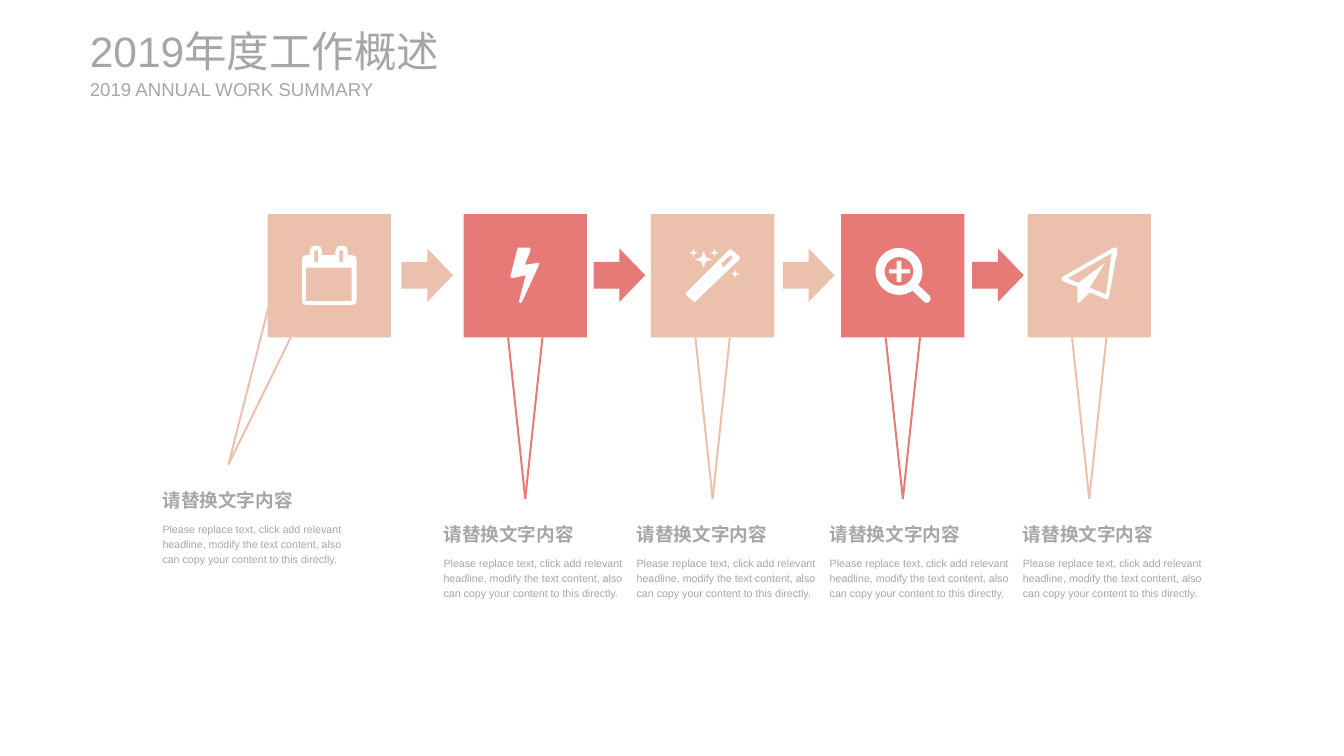
from math import cos, radians, sin

from lxml import etree
from pptx import Presentation
from pptx.dml.color import RGBColor
from pptx.enum.shapes import MSO_CONNECTOR, MSO_SHAPE
from pptx.enum.text import MSO_ANCHOR, MSO_AUTO_SIZE, PP_ALIGN
from pptx.oxml.ns import qn
from pptx.util import Inches, Pt

RECTANGLE = MSO_SHAPE.RECTANGLE
RIGHT_ARROW = MSO_SHAPE.RIGHT_ARROW
STRAIGHT = MSO_CONNECTOR.STRAIGHT
MIDDLE, TOP = MSO_ANCHOR.MIDDLE, MSO_ANCHOR.TOP
LEFT = PP_ALIGN.LEFT
NO_AUTOFIT = MSO_AUTO_SIZE.NONE

PEACH, CORAL, GRAY, WHITE = "EBC1AD", "E77976", "A6A6A6", "FFFFFF"
FONT = "Arial"
HEADING = "请替换文字内容"
BODY = ("Please replace text, click add relevant headline, modify the text "
        "content, also can copy your content to this directly.")
TILE_TOP, TILE_SIZE = 2.24, 1.29
TILE_BOTTOM = TILE_TOP + TILE_SIZE


def rectangle(left, top, right, bottom):
    return [(left, top), (right, top), (right, bottom), (left, bottom)]


def arc(x, y, radius, start=0, end=360):
    return [(x + radius * cos(radians(angle)), y + radius * sin(radians(angle)))
            for angle in range(start, end + 1, 5)]


def star(x, y, radius):
    """Four-pointed sparkle."""
    waist = radius / 4
    return [(x, y - radius), (x + waist, y - waist), (x + radius, y),
            (x + waist, y + waist), (x, y + radius), (x - waist, y + waist),
            (x - radius, y), (x - waist, y - waist)]


# Icon contours in hundredths of an inch from the tile's top left corner.
CALENDAR = [
    [(88, 95), (40, 95), (37, 94), (36, 91), (36, 47), (37, 44), (40, 43),
     (44, 43), (44, 39), (45.5, 34.5), (49, 33), (52, 33), (55.5, 34.5),
     (57, 39), (57, 43), (71, 43), (71, 39), (72.5, 34.5), (76, 33), (79, 33),
     (82.5, 34.5), (84, 39), (84, 43), (88, 43), (92, 44), (93, 47), (93, 91),
     (92, 94)],
    rectangle(40, 56, 88, 91),
    rectangle(49, 38, 53, 50),
    rectangle(75, 38, 79, 50),
]
BOLT = [
    [(79, 53), (61, 92), (60, 93), (59, 93), (58, 91), (65, 64), (51, 67),
     (49, 66), (49, 65), (56, 37), (57, 35), (69, 35), (70, 37), (70, 38),
     (64, 53), (78, 51), (79, 51)],
]
WAND = [
    [(92, 48), (47, 91), (45, 92), (44, 91), (37, 85), (36.5, 83.5), (37, 82),
     (81, 38), (83, 37), (85, 38), (92, 44), (93, 46)],
    [(86, 46), (83, 43), (73, 52), (76, 56)],
    star(44.5, 40.5, 4.5),
    star(55, 47.5, 9),
    star(66.5, 40.5, 4.5),
    star(88, 62.5, 4.5),
]
MAGNIFIER = [
    arc(60.5, 60, 24.5, 55, 395)
    + [(93, 86), (93.5, 89), (92, 92), (89, 93), (87, 92)],
    arc(60.5, 60, 15),
    [(58, 49), (63, 49), (63, 58), (72, 58), (72, 62), (63, 62), (63, 71),
     (58, 71), (58, 62), (50, 62), (50, 58), (58, 58)],
]
PAPER_PLANE = [
    [(94, 38), (85, 87), (84, 89), (82, 89), (65, 82), (55, 92), (53, 93),
     (52, 91), (52, 76), (36, 70), (35.5, 68), (36, 66), (90, 35), (93, 35)],
    [(88, 41), (42, 67), (53, 72), (81, 51), (65, 77), (82, 84)],
]

# Tile left, colour, icon, pointer tip, pointer ends, caption left
STEPS = [
    (2.8, PEACH, CALENDAR, (2.39, 4.86), [(2.81, 3.21), (3.14, 3.33)], 1.7),
]
for index, (tile_left, tile_color, icon_contours) in enumerate([
        (4.85, CORAL, BOLT), (6.81, PEACH, WAND),
        (8.8, CORAL, MAGNIFIER), (10.75, PEACH, PAPER_PLANE)]):
    center = tile_left + TILE_SIZE / 2
    STEPS.append((tile_left, tile_color, icon_contours, (center, 5.22),
                  [(center - 0.18, TILE_BOTTOM), (center + 0.18, TILE_BOTTOM)],
                  4.64 + 2.02 * index))
ARROWS = [(4.2, PEACH), (6.21, CORAL), (8.19, PEACH), (10.17, CORAL)]


def rgb(color):
    return RGBColor.from_string(color)


def paint(shape, color):
    shape.shadow.inherit = False
    shape.fill.solid()
    shape.fill.fore_color.rgb = rgb(color)
    shape.line.fill.background()


def add_block(page, kind, left, top, width, height, color):
    shape = page.shapes.add_shape(
        kind, Inches(left), Inches(top), Inches(width), Inches(height))
    paint(shape, color)


def add_line(page, start, end, color):
    line = page.shapes.add_connector(
        STRAIGHT, *[Inches(length) for length in (*start, *end)])
    line.line.color.rgb = rgb(color)
    line.line.width = Pt(1.5)
    etree.SubElement(line._element.spPr, qn("a:effectLst"))


def add_icon(page, left, top, contours):
    outlines = [[(Inches(x / 100), Inches(y / 100)) for x, y in contour]
                for contour in contours]
    builder = page.shapes.build_freeform(*outlines[0][0])
    builder.add_line_segments(outlines[0][1:])
    for outline in outlines[1:]:
        builder.move_to(*outline[0])
        builder.add_line_segments(outline[1:])
    paint(builder.convert_to_shape(Inches(left), Inches(top)), WHITE)


def write(shape, box, text, size, bold=False, anchor=MIDDLE, spacing=1.0, inset=0):
    shape.left, shape.top, shape.width, shape.height = map(Inches, box)
    frame = shape.text_frame
    frame.word_wrap = True
    frame.auto_size = NO_AUTOFIT
    frame.vertical_anchor = anchor
    frame.margin_left = frame.margin_right = 0
    frame.margin_top = frame.margin_bottom = Inches(inset)
    frame.text = text
    para = frame.paragraphs[0]
    para.alignment = LEFT
    para.line_spacing = spacing
    para.font.name = FONT
    para.font.size = Pt(size)
    para.font.bold = bold
    para.font.color.rgb = rgb(GRAY)


def add_text(page, box, text, size, **options):
    write(page.shapes.add_textbox(0, 0, 0, 0), box, text, size, **options)


def add_header(page, left, top):
    write(page.shapes.title, (left, top, 4.32, 0.54), "2019年度工作概述", 32)
    add_text(page, (left, top + 0.55, 3.07, 0.24), "2019 ANNUAL WORK SUMMARY", 14)


def add_step(page, left, color, icon, tip, ends, caption_left):
    """Pointer, tile with icon, and the caption below the pointer's tip."""
    for end in ends:
        add_line(page, tip, end, color)
    add_block(page, RECTANGLE, left, TILE_TOP, TILE_SIZE, TILE_SIZE, color)
    add_icon(page, left, TILE_TOP, icon)
    caption_top = tip[1] + 0.16
    add_text(page, (caption_left, caption_top, 1.46, 0.37), HEADING, 14,
             bold=True, spacing=1.2, inset=0.11)
    add_text(page, (caption_left, caption_top + 0.42, 1.92, 0.47), BODY, 8,
             anchor=TOP, spacing=1.2)


def main():
    deck = Presentation()
    deck.slide_width, deck.slide_height = Inches(14.06), Inches(7.91)
    page = deck.slides.add_slide(deck.slide_layouts[5])
    add_header(page, 0.94, 0.26)
    for step in STEPS:
        add_step(page, *step)
    for left, color in ARROWS:
        add_block(page, RIGHT_ARROW, left, 2.6, 0.54, 0.56, color)
    deck.save("out.pptx")


if __name__ == "__main__":
    main()
